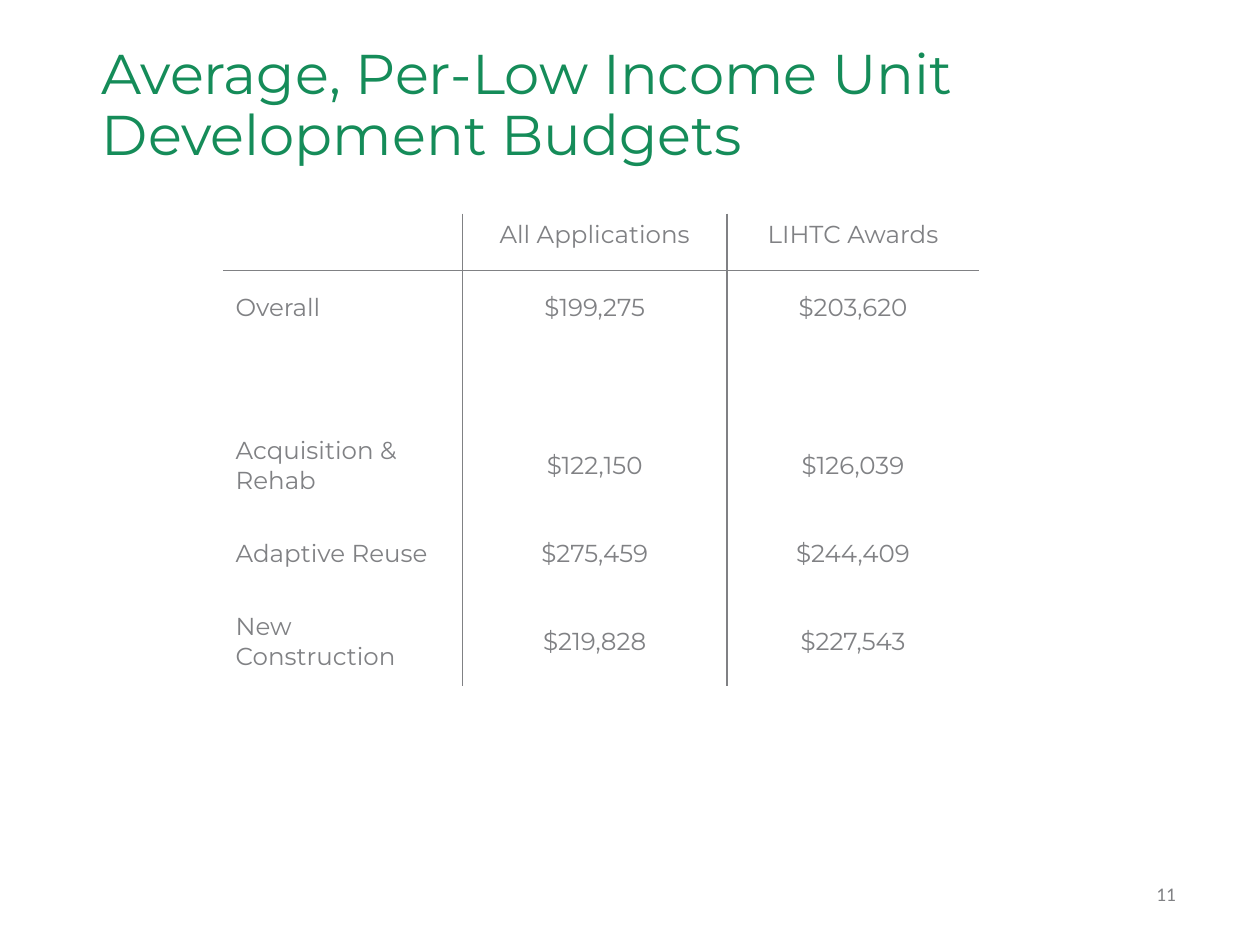
from dataclasses import dataclass

from lxml import etree
from pptx import Presentation
from pptx import util as u
from pptx.dml.color import RGBColor
from pptx.enum import text
from pptx.oxml import ns

GREEN = RGBColor(0x15, 0x8C, 0x59)
GRAY = RGBColor(0x80, 0x81, 0x84)
SLIDE_WIDTH, SLIDE_HEIGHT = u.Inches(10), u.Inches(7.5)
COLUMN_SHARES = (0.19, 0.21, 0.2)
ROW_SHARES = (0.06, 0.08, 0.08, 0.0933, 0.0933, 0.0933)


@dataclass(frozen=True)
class Area:
    left: float
    top: float
    width: float
    height: float

    def lengths(self) -> tuple[int, int, int, int]:
        return (
            int(self.left * SLIDE_WIDTH),
            int(self.top * SLIDE_HEIGHT),
            int(self.width * SLIDE_WIDTH),
            int(self.height * SLIDE_HEIGHT),
        )


@dataclass(frozen=True)
class Budget:
    category: str = ""
    applications: str = ""
    awards: str = ""

    def entries(self) -> tuple[str, str, str]:
        return self.category, self.applications, self.awards


BUDGETS = (
    Budget("", "All Applications", "LIHTC Awards"),
    Budget("Overall", "$199,275", "$203,620"),
    Budget(),
    Budget("Acquisition & Rehab", "$122,150", "$126,039"),
    Budget("Adaptive Reuse", "$275,459", "$244,409"),
    Budget("New Construction", "$219,828", "$227,543"),
)


def write(frame, words: str, *, size: float, color: RGBColor = GRAY,
          font: str = "Montserrat", align=text.PP_ALIGN.LEFT,
          spacing: float = 1.0) -> None:
    paragraph = frame.paragraphs[0]
    paragraph.alignment = align
    paragraph.line_spacing = spacing
    run = paragraph.add_run()
    run.text = words
    run.font.name = font
    run.font.size = u.Pt(size)
    run.font.color.rgb = color


def rule_cell(cell, ruled_sides: set[str]) -> None:
    properties = cell._tc.get_or_add_tcPr()
    for position, side in enumerate("LRTB"):
        line = etree.Element(ns.qn(f"a:ln{side}"), w=str(u.Pt(1)))
        if side in ruled_sides:
            fill = etree.SubElement(line, ns.qn("a:solidFill"))
            etree.SubElement(fill, ns.qn("a:srgbClr"), val=str(GRAY))
        else:
            etree.SubElement(line, ns.qn("a:noFill"))
        properties.insert(position, line)


def sides_of(row: int, column: int) -> set[str]:
    rules = {
        "L": column > 0,
        "R": column < len(COLUMN_SHARES) - 1,
        "T": row == 1,
        "B": row == 0,
    }
    return {side for side, ruled in rules.items() if ruled}


def draw_budgets(slide, left: float, top: float) -> None:
    area = Area(left, top, sum(COLUMN_SHARES), sum(ROW_SHARES))
    table = slide.shapes.add_table(
        len(ROW_SHARES), len(COLUMN_SHARES), *area.lengths()).table
    table.first_row = table.horz_banding = False
    for column, share in zip(table.columns, COLUMN_SHARES):
        column.width = int(share * SLIDE_WIDTH)
    for row, share in zip(table.rows, ROW_SHARES):
        row.height = int(share * SLIDE_HEIGHT)
    for row, budget in enumerate(BUDGETS):
        for column, entry in enumerate(budget.entries()):
            cell = table.cell(row, column)
            cell.fill.background()
            cell.vertical_anchor = (
                text.MSO_ANCHOR.MIDDLE if row else text.MSO_ANCHOR.TOP)
            rule_cell(cell, sides_of(row, column))
            if entry:
                write(cell.text_frame, entry, size=14,
                      align=text.PP_ALIGN.CENTER if column
                      else text.PP_ALIGN.LEFT)


def add_box(slide, area: Area, *, wrap: bool = True):
    frame = slide.shapes.add_textbox(*area.lengths()).text_frame
    frame.word_wrap = wrap
    frame.vertical_anchor = text.MSO_ANCHOR.MIDDLE
    return frame


def main() -> None:
    deck = Presentation()
    deck.slide_width, deck.slide_height = SLIDE_WIDTH, SLIDE_HEIGHT
    slide = deck.slides.add_slide(deck.slide_layouts[6])
    page_number = add_box(slide, Area(0.908, 0.927, 0.038, 0.038), wrap=False)
    write(page_number, "11", size=11, font="Calibri")
    title = add_box(slide, Area(0.071, 0.039, 0.839, 0.148))
    write(title, "Average, Per-Low Income Unit Development Budgets",
          size=32, color=GREEN, spacing=0.9)
    draw_budgets(slide, 0.177, 0.226)
    deck.save("out.pptx")


if __name__ == "__main__":
    main()
